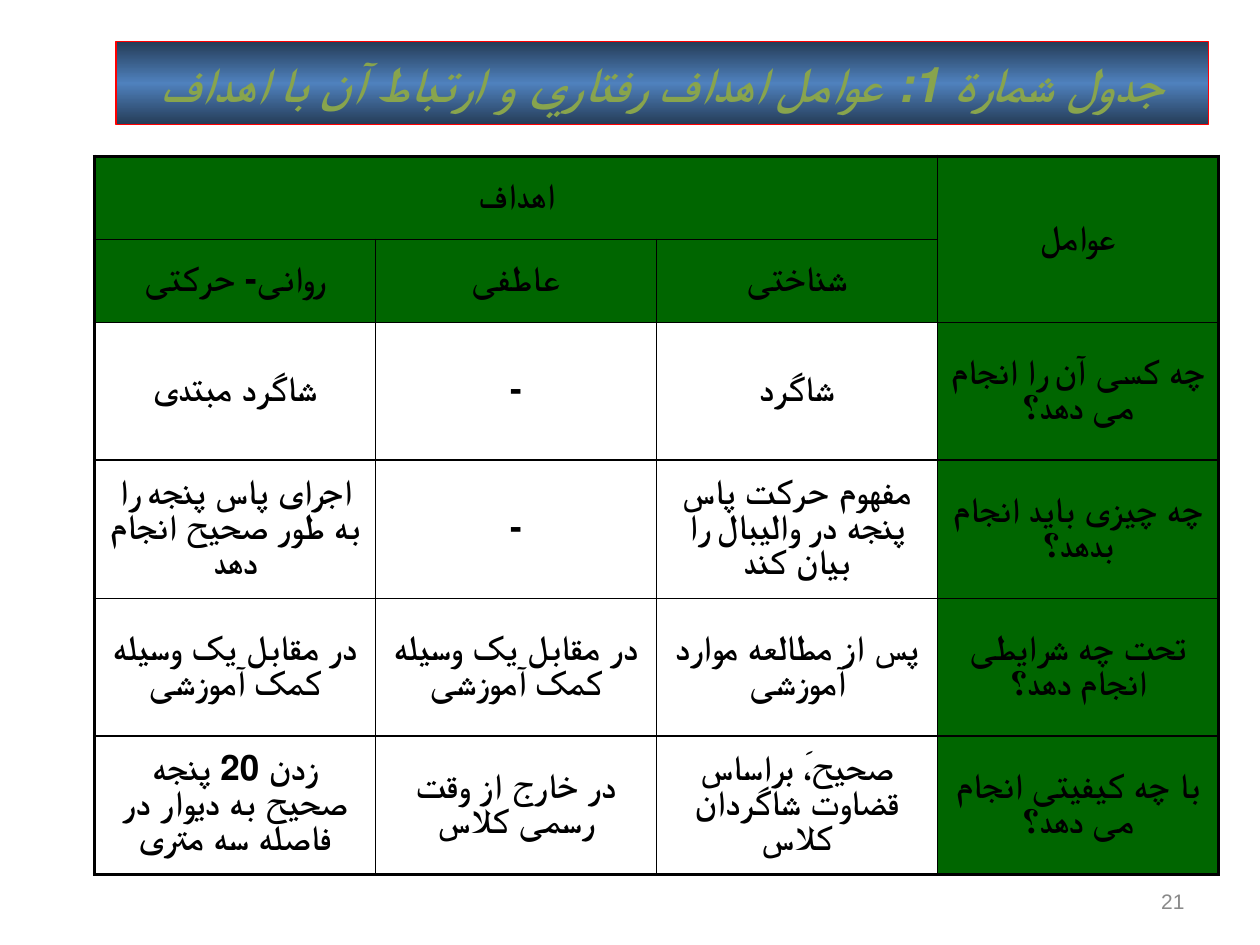
import copy

import pptx
import pptx.dml.color
import pptx.enum.text
import pptx.oxml
import pptx.oxml.ns
import pptx.util

Inches, Pt = pptx.util.Inches, pptx.util.Pt
RGB = pptx.dml.color.RGBColor
ALIGN = pptx.enum.text.PP_ALIGN
MIDDLE = pptx.enum.text.MSO_ANCHOR.MIDDLE

BLACK = RGB(0x00, 0x00, 0x00)
GREEN = RGB(0x00, 0x66, 0x00)
OLIVE = RGB(0x88, 0xA4, 0x4D)
GRAY = RGB(0x89, 0x89, 0x89)
RED = RGB(0xFF, 0x00, 0x00)
NAVY = RGB(0x25, 0x3C, 0x57)
BLUE = RGB(0x4F, 0x81, 0xBD)

TITLE = "جدول شمارة 1: عوامل اهداف رفتاري و ارتباط آن با اهداف"
NUMBER = "21"
ROWS = [
    ["اهداف", "", "", "عوامل"],
    ["روانی- حرکتی", "عاطفی", "شناختی", ""],
    ["شاگرد مبتدی", "-", "شاگرد", "چه کسی آن را انجام می دهد؟"],
    ["اجرای پاس پنجه را به طور صحیح انجام دهد", "-",
     "مفهوم حرکت پاس پنجه در والیبال را بیان کند", "چه چیزی باید انجام بدهد؟"],
    ["در مقابل یک وسیله کمک آموزشی", "در مقابل یک وسیله کمک آموزشی",
     "پس از مطالعه موارد آموزشی", "تحت چه شرایطی انجام دهد؟"],
    ["زدن 20 پنجه صحیح به دیوار در فاصله سه متری", "در خارج از وقت رسمی کلاس",
     "صحیح،َ براساس قضاوت شاگردان کلاس", "با چه کیفیتی انجام می دهد؟"],
]
MERGES = [((0, 0), (0, 2)), ((0, 3), (1, 3))]
HEIGHTS = [0.66, 0.66, 1.09, 1.1, 1.09, 1.1]
WIDTH = 2.23
HEAD_ROWS = 2
THIN, THICK = 1, 2.25


def write(frame, text, size, color, font="Arial", bold=False, italic=False,
          align=ALIGN.CENTER, rtl=True, before=0):
    frame.word_wrap = True
    frame.vertical_anchor = MIDDLE
    para = frame.paragraphs[0]
    para.alignment = align
    para.space_before = Pt(before)
    if rtl:
        para._p.get_or_add_pPr().set("rtl", "1")
    run = para.add_run()
    run.text = text
    run.font.name, run.font.size = font, Pt(size)
    run.font.bold, run.font.italic = bold, italic
    run.font.color.rgb = color


def set_edges(cell, widths):
    """Draw the left, right, top and bottom borders, in that order."""
    props = cell._tc.get_or_add_tcPr()
    for spot, (side, width) in enumerate(zip("LRTB", widths)):
        props.insert(spot, pptx.oxml.parse_xml(
            f'<a:ln{side} {pptx.oxml.ns.nsdecls("a")} w="{Pt(width)}">'
            f'<a:solidFill><a:srgbClr val="{BLACK}"/></a:solidFill></a:ln{side}>'))


def add_title(slide):
    title = slide.shapes.title
    title.left, title.top = Inches(0.92), Inches(0.33)
    title.width, title.height = Inches(8.67), Inches(0.66)
    title.fill.gradient()
    title.fill.gradient_angle = 90
    stops = title._element.spPr.find(".//" + pptx.oxml.ns.qn("a:gsLst"))
    stops.append(copy.deepcopy(stops[-1]))
    colors = [(0, NAVY), (0.5, BLUE), (1, NAVY)]
    for stop, (place, color) in zip(title.fill.gradient_stops, colors):
        stop.position, stop.color.rgb = place, color
    title.line.color.rgb = RED
    title.line.width = Pt(0.75)
    title.text_frame.auto_size = pptx.enum.text.MSO_AUTO_SIZE.NONE
    write(title.text_frame, TITLE, 28, OLIVE, font="Calibri", bold=True, italic=True)


def add_grid(slide):
    last_row, last_col = len(ROWS) - 1, len(ROWS[0]) - 1
    table = slide.shapes.add_table(
        len(ROWS), len(ROWS[0]), Inches(0.75), Inches(1.24),
        Inches(WIDTH * len(ROWS[0])), Inches(sum(HEIGHTS))).table
    table.first_row = table.horz_banding = False
    for col in table.columns:
        col.width = Inches(WIDTH)
    for row, height in zip(table.rows, HEIGHTS):
        row.height = Inches(height)
    for r, texts in enumerate(ROWS):
        for c, text in enumerate(texts):
            cell = table.cell(r, c)
            if r < HEAD_ROWS or c == last_col:
                cell.fill.solid()
                cell.fill.fore_color.rgb = GREEN
            else:
                cell.fill.background()
            outer = (c == 0, c == last_col, r == 0, r == last_row)
            set_edges(cell, [THICK if edge else THIN for edge in outer])
            cell.vertical_anchor = MIDDLE
            if text:
                write(cell.text_frame, text, 20, BLACK, bold=True, before=4)
    for start, end in MERGES:
        table.cell(*start).merge(table.cell(*end))


def main():
    deck = pptx.Presentation()
    deck.slide_width, deck.slide_height = Inches(10), Inches(7.5)
    slide = deck.slides.add_slide(deck.slide_layouts[5])
    add_title(slide)
    add_grid(slide)
    box = slide.shapes.add_textbox(Inches(7.17), Inches(6.95), Inches(2.33), Inches(0.4))
    write(box.text_frame, NUMBER, 12, GRAY, align=ALIGN.RIGHT, rtl=False)
    deck.save("out.pptx")


if __name__ == "__main__":
    main()
